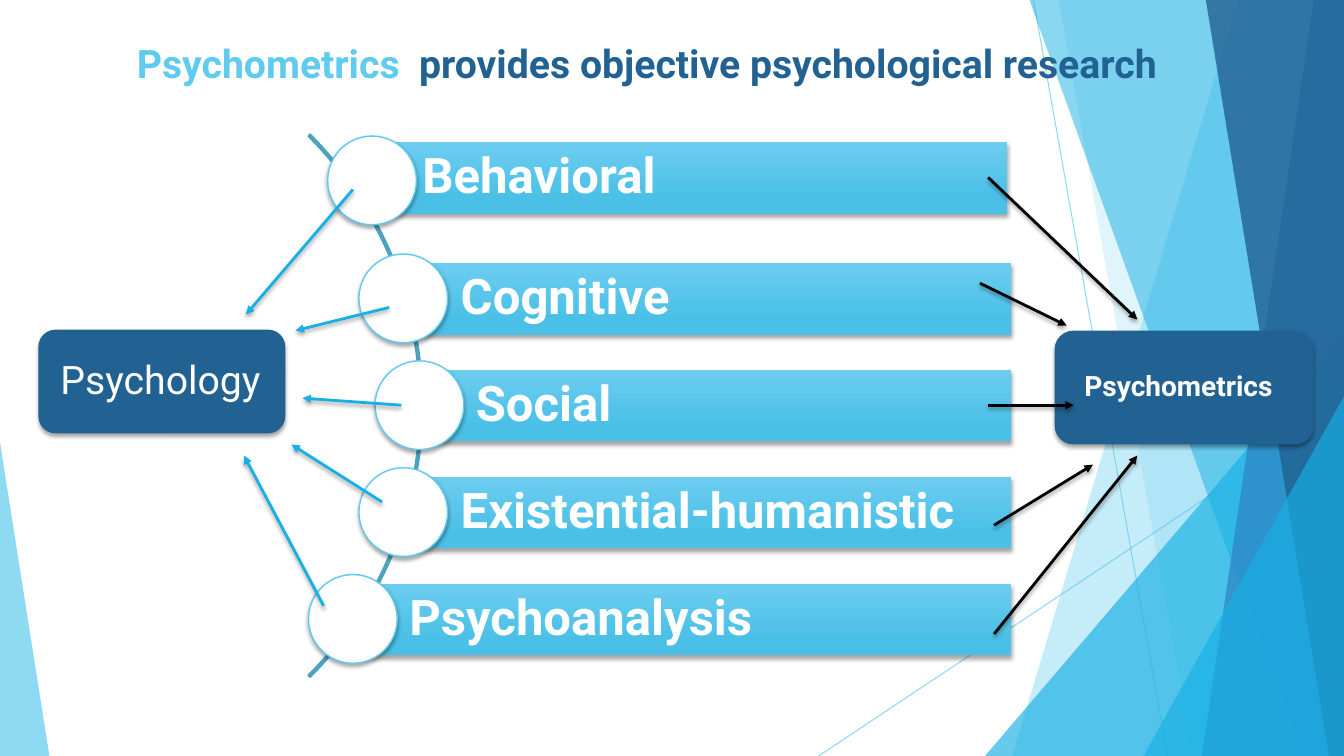
"""Build a slide on how psychometrics serves the schools of psychology."""
import lxml.etree
import pptx
import pptx.dml.color
import pptx.enum.dml
import pptx.enum.shapes
import pptx.enum.text
import pptx.oxml.ns
import pptx.util

Inches = pptx.util.Inches
Pt = pptx.util.Pt
RGB = pptx.dml.color.RGBColor.from_string
qn = pptx.oxml.ns.qn
add = lxml.etree.SubElement
KIND = pptx.enum.shapes.MSO_SHAPE
LINE = pptx.enum.shapes.MSO_CONNECTOR.STRAIGHT
ALIGN = pptx.enum.text.PP_ALIGN
ANCHOR = pptx.enum.text.MSO_ANCHOR

HUES = {
    "sky": "5FCBEF", "azure": "17B0E4", "blue": "2E83C3", "navy": "226292",
    "arc": "4CA3BF", "light": "6CCDF0", "deep": "4BC0E6",
    "white": "FFFFFF", "black": "000000",
}


def write(shape, *runs, size=28, bold=True, align=ALIGN.LEFT,
          anchor=ANCHOR.MIDDLE, left=0.1, edge=0.1, space=None):
    """Put runs of (text, hue) into a shape."""
    frame = shape.text_frame
    frame.word_wrap = True
    frame.vertical_anchor = anchor
    frame.margin_left = Inches(left)
    frame.margin_right = Inches(0.1)
    frame.margin_top = frame.margin_bottom = Inches(edge)
    para = frame.paragraphs[0]
    para.alignment = align
    para.line_spacing = space
    for text, hue in runs:
        run = para.add_run()
        run.text = text
        run.font.name = "Roboto"
        run.font.size = Pt(size)
        run.font.bold = bold
        run.font.color.rgb = RGB(HUES[hue])


def dress(item, fill=None, line=None, width=1, alpha=100, shadow=False):
    """Set fill, line, opacity and shadow of a shape or connector."""
    if fill:
        item.fill.solid()
        item.fill.fore_color.rgb = RGB(HUES[fill])
    if line:
        item.line.width = Pt(width)
        item.line.color.rgb = RGB(HUES[line])
    else:
        item.line.fill.background()
    props = item._element.spPr
    if alpha < 100:
        add(next(props.iter(qn("a:srgbClr"))), qn("a:alpha"), val=str(alpha * 1000))
    effects = add(props, qn("a:effectLst"))
    if shadow:
        outer = add(effects, qn("a:outerShdw"), blurRad=str(Pt(3)), dist=str(Pt(2)),
                    dir="5400000", algn="ctr", rotWithShape="0")
        shade = add(outer, qn("a:srgbClr"), val=HUES["black"])
        add(shade, qn("a:alpha"), val="35000")


deck = pptx.Presentation()
deck.slide_width, deck.slide_height = Inches(13.33), Inches(7.5)
slide = deck.slides.add_slide(deck.slide_layouts[6])
shapes = slide.shapes

for ends in [(10.25, 0, 11.58, 7.5), (13.33, 4.03, 8.12, 7.5)]:
    ray = shapes.add_connector(LINE, *map(Inches, ends))
    dress(ray, line="sky", width=0.75, alpha=70)

facets = [
    ("band", (12.28, 10.04), "sky", 36),
    ("band", (10.5, 11.83), "sky", 20),
    ("wedge", (9.77, 3.33, 3.56, 4.17, 1), "azure", 66),
    ("band", (10.21, 12.91), "azure", 50),
    ("band", (13.03, 11.92), "blue", 70),
    ("band", (11.96, 13.18), "navy", 80),
    ("wedge", (11.34, 3.93, 1.99, 3.57, 1), "azure", 66),
    ("wedge", (0, 4.39, 0.49, 3.11, 0), "sky", 70),
]
for kind, place, hue, alpha in facets:
    if kind == "band":
        top, foot = map(Inches, place)
        right, base = deck.slide_width, deck.slide_height
        pen = shapes.build_freeform(top, 0)
        pen.add_line_segments([(right, 0), (right, base), (foot, base)], close=True)
        facet = pen.convert_to_shape()
    else:
        facet = shapes.add_shape(KIND.ISOSCELES_TRIANGLE, *map(Inches, place[:4]))
        facet.adjustments[0] = place[4]
    dress(facet, fill=hue, alpha=alpha)

title = shapes.add_textbox(Inches(0.45), Inches(0.53), Inches(11.93), Inches(0.38))
write(title, ("Psychometrics", "sky"),
      ("  provides objective psychological research", "navy"),
      align=ALIGN.CENTER, anchor=ANCHOR.BOTTOM, edge=0.05)

arc = shapes.add_shape(KIND.BLOCK_ARC, Inches(-3.42), Inches(0.22), Inches(7.61), Inches(7.61))
for index, value in enumerate([189, 27, 0.003]):
    arc.adjustments[index] = value
arc.fill.background()
dress(arc, line="arc", width=1.5)

schools = [
    ("Behavioral", 3.63, 1.41, 9.99, 3.25, 1.35),
    ("Cognitive", 4.01, 2.61, 10.03, 3.56, 2.52),
    ("Social", 4.16, 3.67, 10.03, 3.72, 3.58),
    ("Existential-humanistic", 4.01, 4.73, 10.03, 3.56, 4.64),
    ("Psychoanalysis", 3.5, 5.79, 10.03, 3.06, 5.7),
]
for name, left, top, right, dot_x, dot_y in schools:
    bar = shapes.add_shape(KIND.RECTANGLE, Inches(left), Inches(top),
                           Inches(right - left), Inches(0.71))
    bar.fill.gradient()
    bar.fill.gradient_angle = 270
    for stop, hue, spot in zip(bar.fill.gradient_stops, ["light", "deep"], [0, 0.78]):
        stop.color.rgb = RGB(HUES[hue])
        stop.position = spot
    dress(bar, shadow=True)
    write(bar, (name, "white"), size=35, left=0.56, space=0.9)
    dot = shapes.add_shape(KIND.OVAL, Inches(dot_x), Inches(dot_y), Inches(0.88), Inches(0.88))
    dress(dot, fill="white", line="sky", shadow=True)

fields = [
    ("Psychology", (0.38, 3.27, 2.45, 1.03), 28, False, 0.17),
    ("Psychometrics", (10.46, 3.28, 2.57, 1.13), 20, True, 0.24),
]
for name, place, size, bold, inset in fields:
    box = shapes.add_shape(KIND.ROUNDED_RECTANGLE, *map(Inches, place))
    dress(box, fill="navy", shadow=True)
    write(box, (name, "white"), size=size, bold=bold, left=inset, space=0.9)

arrows = {
    "azure": [
        (3.5, 1.88, 2.44, 3.12), (3.86, 3.05, 2.93, 3.28), (3.98, 4.02, 3, 3.95),
        (3.21, 6.01, 2.42, 4.52), (3.79, 4.98, 2.89, 4.41),
    ],
    "black": [
        (9.8, 1.76, 11.28, 3.17), (9.72, 2.81, 10.58, 3.23), (9.8, 4.02, 10.65, 4.02),
        (9.86, 5.21, 10.84, 4.61), (9.86, 6.29, 11.28, 4.52),
    ],
}
for hue, routes in arrows.items():
    for ends in routes:
        arrow = shapes.add_connector(LINE, *map(Inches, ends))
        dress(arrow, line=hue, width=2, shadow=True)
        add(arrow._element.spPr.find(qn("a:ln")), qn("a:tailEnd"), type="triangle")

deck.save("out.pptx")
